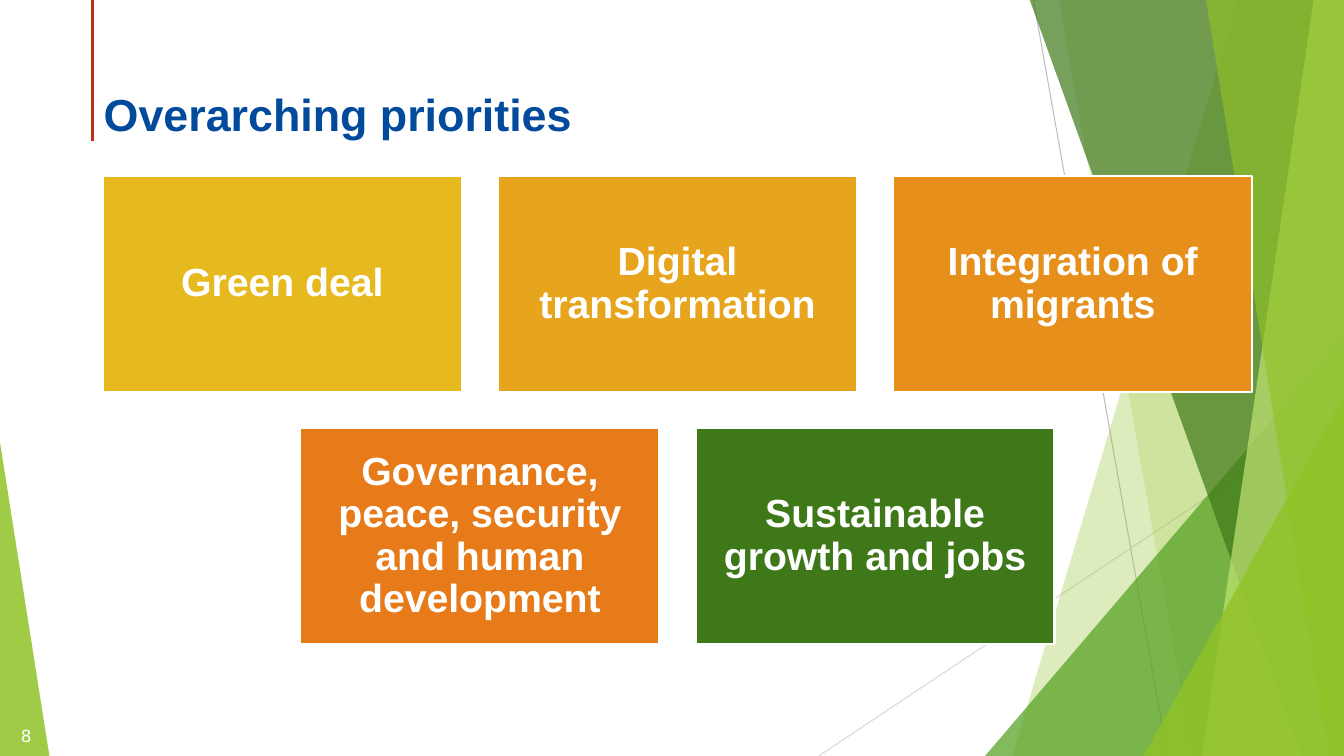
from dataclasses import dataclass

from lxml.etree import SubElement
from pptx import Presentation
from pptx.dml.color import RGBColor
from pptx.enum.shapes import MSO_CONNECTOR, MSO_SHAPE
from pptx.enum.text import MSO_ANCHOR, PP_ALIGN
from pptx.oxml.ns import qn
from pptx.util import Inches, Pt


@dataclass(frozen=True)
class Theme:
    white: str = "FFFFFF"
    title: str = "024B9C"
    accent: str = "C42F1A"
    gray: str = "BFBFBF"
    light_gray: str = "D9D9D9"
    lime: str = "90C226"
    pale_lime: str = "C0E474"
    green: str = "54A021"
    dark_green: str = "3F7819"
    yellow: str = "E6B91E"
    amber: str = "E6A51D"
    orange: str = "E6901B"
    deep_orange: str = "E77B19"
    font: str = "Arial"
    number_font: str = "DejaVu Sans"
    title_size: int = 32
    card_size: int = 28
    number_size: int = 12


class Deck:
    def __init__(self, theme, width, height):
        self.theme = theme
        self.prs = Presentation()
        self.prs.slide_width = Inches(width)
        self.prs.slide_height = Inches(height)
        self.s = self.prs.slides.add_slide(self.prs.slide_layouts[6])

    def line(self, x1, y1, x2, y2, color, weight):
        c = self.s.shapes.add_connector(
            MSO_CONNECTOR.STRAIGHT, Inches(x1), Inches(y1), Inches(x2), Inches(y2))
        c.line.color.rgb = RGBColor.from_string(color)
        c.line.width = Pt(weight)
        SubElement(c.element.spPr, qn("a:effectLst"))

    def fill(self, sp, color, opacity=100):
        sp.shadow.inherit = False
        sp.line.fill.background()
        sp.fill.solid()
        sp.fill.fore_color.rgb = RGBColor.from_string(color)
        if opacity < 100:
            clr = sp.element.spPr.find(qn("a:solidFill"))[0]
            SubElement(clr, qn("a:alpha")).set("val", str(opacity * 1000))

    def shard(self, points, color, opacity):
        start, *rest = [(Inches(x), Inches(y)) for x, y in points]
        builder = self.s.shapes.build_freeform(*start, scale=1.0)
        builder.add_line_segments(rest, close=True)
        self.fill(builder.convert_to_shape(), color, opacity)

    def triangle(self, x, y, w, h, apex, color, opacity):
        sp = self.s.shapes.add_shape(
            MSO_SHAPE.ISOSCELES_TRIANGLE, Inches(x), Inches(y), Inches(w), Inches(h))
        sp.adjustments[0] = apex
        self.fill(sp, color, opacity)

    def set_text(self, sp, text, size, color, font, bold=True,
                 align=PP_ALIGN.CENTER, anchor=MSO_ANCHOR.MIDDLE):
        tf = sp.text_frame
        tf.word_wrap = True
        tf.vertical_anchor = anchor
        p = tf.paragraphs[0]
        p.text = text
        p.alignment = align
        p.font.size = Pt(size)
        p.font.name = font
        p.font.bold = bold
        p.font.color.rgb = RGBColor.from_string(color)
        return tf

    def text(self, x, y, w, h, *args, **kwargs):
        sp = self.s.shapes.add_textbox(Inches(x), Inches(y), Inches(w), Inches(h))
        self.set_text(sp, *args, **kwargs)

    def card(self, x, y, w, h, text, color):
        t = self.theme
        sp = self.s.shapes.add_shape(
            MSO_SHAPE.RECTANGLE, Inches(x), Inches(y), Inches(w), Inches(h))
        self.fill(sp, color)
        sp.line.color.rgb = RGBColor.from_string(t.white)
        sp.line.width = Pt(1.5)
        tf = self.set_text(sp, text, t.card_size, t.white, t.font)
        tf.margin_left = tf.margin_right = Inches(0.12)
        tf.margin_top = tf.margin_bottom = Inches(0.12)
        tf.paragraphs[0].line_spacing = 0.9


def draw_backdrop(deck, width, height):
    t = deck.theme

    def band(top_left, bottom_left, color, opacity):
        deck.shard([(top_left, -0.01), (width, -0.01), (width, height),
                    (bottom_left, height)], color, opacity)

    def corner(x, y, color, opacity):
        deck.triangle(x, y, width - x, height - y, 1, color, opacity)

    deck.line(10.25, 0, 11.58, height, t.gray, 0.75)
    deck.line(width, 4.03, 8.12, height, t.light_gray, 0.75)
    band(12.28, 10.04, t.lime, 30)
    band(10.5, 11.83, t.lime, 20)
    corner(9.77, 3.33, t.green, 72)
    band(10.21, 12.91, t.dark_green, 70)
    band(13.03, 11.92, t.pale_lime, 70)
    band(11.96, 13.18, t.lime, 65)
    corner(11.34, 3.93, t.lime, 80)
    deck.triangle(0, 4.39, 0.49, 3.11, 0, t.lime, 85)
    deck.line(0.92, 0, 0.92, 1.4, t.accent, 2.25)


def draw_priorities(deck):
    t = deck.theme
    card_w, card_h, gap = 3.56, 2.14, 0.36
    left, top, columns = 1.02, 1.75, 3
    rows = [
        [("Green deal", t.yellow),
         ("Digital transformation", t.amber),
         ("Integration of migrants", t.orange)],
        [("Governance, peace, security and human development", t.deep_orange),
         ("Sustainable growth and jobs", t.dark_green)],
    ]
    for i, row in enumerate(rows):
        indent = (columns - len(row)) * (card_w + gap) / 2
        for j, (text, color) in enumerate(row):
            deck.card(left + indent + j * (card_w + gap), top + i * (card_h + gap),
                      card_w, card_h, text, color)


def main():
    width, height = 13.33, 7.5
    t = Theme()
    deck = Deck(t, width, height)
    draw_backdrop(deck, width, height)
    draw_priorities(deck)
    deck.text(0.93, 0.81, 9.54, 0.84, "Overarching priorities", t.title_size, t.title,
              t.font, align=PP_ALIGN.LEFT, anchor=MSO_ANCHOR.TOP)
    deck.text(0, 7.1, 0.52, 0.4, "8", t.number_size, t.white, t.number_font, bold=False)
    deck.prs.save("out.pptx")


if __name__ == "__main__":
    main()
